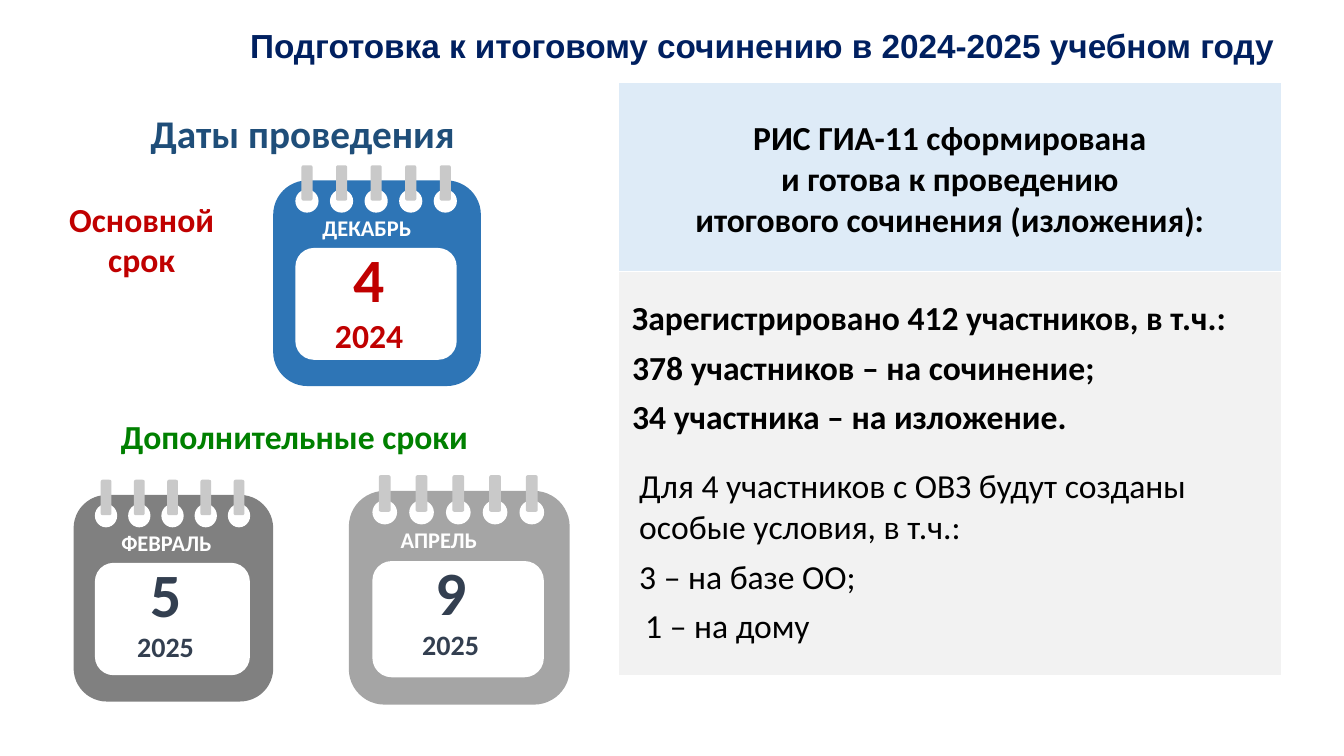
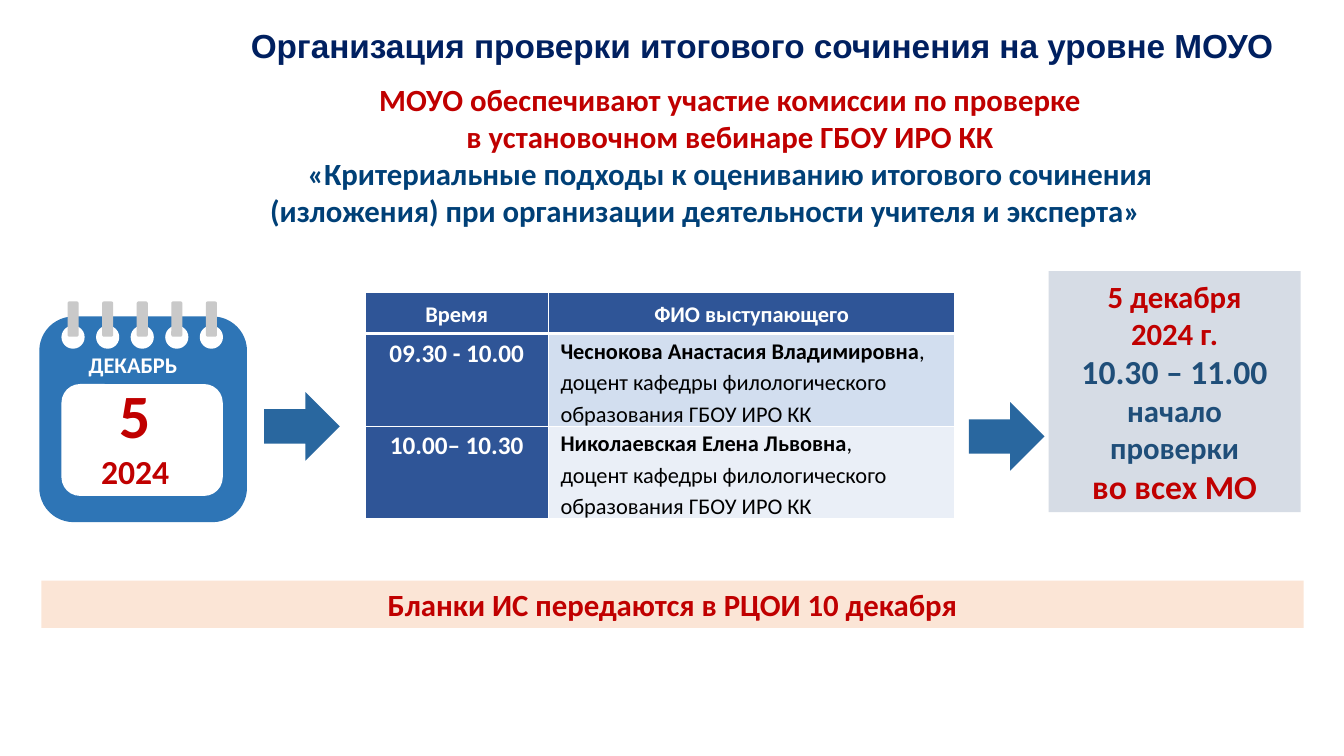
from lxml import etree
from pptx import Presentation
from pptx.dml.color import RGBColor
from pptx.enum import shapes as sh, text as tx
from pptx.oxml import ns
from pptx.util import Inches, Pt

NAVY = RGBColor(0x00, 0x20, 0x60)
RED = RGBColor(0xC0, 0x00, 0x00)
GREEN = RGBColor(0x00, 0x80, 0x00)
BLUE = RGBColor(0x2E, 0x75, 0xB6)
DEEP = RGBColor(0x1F, 0x4E, 0x79)
SEA = RGBColor(0x00, 0x40, 0x77)
HEAD = RGBColor(0x2F, 0x55, 0x97)
ARROW = RGBColor(0x29, 0x67, 0x9F)
SLATE = RGBColor(0x33, 0x3F, 0x50)
DARK = RGBColor(0x80, 0x80, 0x80)
GREY = RGBColor(0xA5, 0xA5, 0xA5)
PIN = RGBColor(0xC9, 0xC9, 0xC9)
MIST = RGBColor(0xD6, 0xDC, 0xE5)
PEACH = RGBColor(0xFB, 0xE5, 0xD6)
SKY = RGBColor(0xDE, 0xEB, 0xF7)
PALE = RGBColor(0xF2, 0xF2, 0xF2)
BAND = RGBColor(0xD2, 0xDE, 0xEF)
LIGHT = RGBColor(0xEA, 0xEF, 0xF7)
BLACK = RGBColor(0, 0, 0)
WHITE = RGBColor(0xFF, 0xFF, 0xFF)

MID = tx.PP_ALIGN.CENTER
LEFT = tx.PP_ALIGN.LEFT
ROUND = sh.MSO_SHAPE.ROUNDED_RECTANGLE
OVAL = sh.MSO_SHAPE.OVAL
RECT = sh.MSO_SHAPE.RECTANGLE
RIGHT = sh.MSO_SHAPE.RIGHT_ARROW


def put(frame, words, size=24, color=BLACK, bold=True, font="Calibri",
        align=MID, left=0, first=0, before=0, lead=None, plain=False,
        same=False):
    """Add a paragraph, or with same=True a run on the last one."""
    par = frame.paragraphs[-1]
    if not same:
        if par.runs:
            par = frame.add_paragraph()
        par.alignment = align
        par.space_before = Pt(before)
        if lead:
            par.line_spacing = lead
        prop = par._p.get_or_add_pPr()
        prop.set("marL", str(Inches(left)))
        prop.set("indent", str(Inches(first)))
        if plain:
            etree.SubElement(prop, ns.qn("a:buNone"))
    for i, line in enumerate(words.split("\n")):
        if i:
            par.add_line_break()
        if not line:
            continue
        run = par.add_run()
        run.text = line
        run.font.size = Pt(size)
        run.font.name = font
        run.font.bold = bold
        run.font.color.rgb = color


class Deck:
    def __init__(self):
        self.file = Presentation()
        self.file.slide_width = Inches(13.33)
        self.file.slide_height = Inches(7.5)
        self.page = None

    def holder(self, shape, x, y, w, h):
        """Move a placeholder and return its cleared frame."""
        shape.left, shape.top = Inches(x), Inches(y)
        shape.width, shape.height = Inches(w), Inches(h)
        frame = shape.text_frame
        frame.auto_size = tx.MSO_AUTO_SIZE.NONE
        frame.vertical_anchor = tx.MSO_ANCHOR.TOP
        frame.word_wrap = True
        return frame

    def start(self, title, layout):
        self.page = self.file.slides.add_slide(self.file.slide_layouts[layout])
        frame = self.holder(self.page.shapes.title, 2.11, 0.28, 10.89, 0.65)
        put(frame, title, size=23.8, color=NAVY, font="Arial", lead=0.8)

    def body(self, x, y, w, h):
        return self.holder(self.page.placeholders[1], x, y, w, h)

    def label(self, x, y, w, h, home=None):
        home = home or self.page.shapes
        box = home.add_textbox(Inches(x), Inches(y), Inches(w), Inches(h))
        box.text_frame.word_wrap = True
        return box.text_frame

    def block(self, kind, x, y, w, h, fill, home=None):
        home = home or self.page.shapes
        item = home.add_shape(kind, Inches(x), Inches(y), Inches(w), Inches(h))
        item.shadow.inherit = False
        item.fill.solid()
        item.fill.fore_color.rgb = fill
        item.line.fill.background()
        item.text_frame.word_wrap = True
        item.text_frame.vertical_anchor = tx.MSO_ANCHOR.MIDDLE
        return item.text_frame

    def leaf(self, x, y, w, h, fill, month, day, year, ink, small):
        """Draw a calendar leaf; parts scale with its body."""
        home = self.page.shapes.add_group_shape().shapes
        sx, sy = w / 2.06, h / 2.04

        def fit(dx, dy, dw, dh):
            return x + dx * sx, y + dy * sy, dw * sx, dh * sy

        self.block(ROUND, x, y, w, h, fill, home)
        for i in range(5):
            self.block(OVAL, *fit(0.22 + i * 0.343, 0.09, 0.23, 0.23), WHITE, home)
        put(self.label(*fit(0.39, 0.29, 1.52, 0.37), home), month,
            size=16, color=WHITE, align=LEFT)
        self.block(ROUND, *fit(0.22, 0.67, 1.6, 1.11), WHITE, home)
        date = self.label(*fit(-0.09, 0.55, 2.08, 1.25), home)
        put(date, day, size=44, color=ink)
        put(date, year, size=small, color=ink)
        for i in range(5):
            self.block(ROUND, *fit(0.28 + i * 0.343, -0.15, 0.11, 0.35), PIN, home)

    def grid(self, x, y, cols, rows):
        frame = self.page.shapes.add_table(
            len(rows), len(cols), Inches(x), Inches(y),
            Inches(sum(cols)), Inches(sum(rows)))
        table = frame.table
        table.horz_banding = False
        for col, w in zip(table.columns, cols):
            col.width = Inches(w)
        for row, h in zip(table.rows, rows):
            row.height = Inches(h)
        return table

    def cell(self, cell, fill, side=0.01, top=0, mid=True, foot=1):
        """Style a cell with white borders and return its frame."""
        cell.margin_left = cell.margin_right = Inches(side)
        cell.margin_top, cell.margin_bottom = Inches(top), 0
        cell.vertical_anchor = tx.MSO_ANCHOR.MIDDLE if mid else tx.MSO_ANCHOR.TOP
        prop = cell._tc.get_or_add_tcPr()
        for edge, wide in zip("LRTB", (1, 1, 1, foot)):
            line = etree.SubElement(prop, ns.qn("a:ln" + edge), w=str(Pt(wide)))
            paint = etree.SubElement(line, ns.qn("a:solidFill"))
            etree.SubElement(paint, ns.qn("a:srgbClr"), val=str(WHITE))
        cell.fill.solid()
        cell.fill.fore_color.rgb = fill
        return cell.text_frame


def dates(deck):
    deck.start("Подготовка к итоговому сочинению в 2024-2025 учебном году", 5)

    # Registration figures
    table = deck.grid(6.13, 0.82, [6.58], [1.87, 4.01])
    head = deck.cell(table.cell(0, 0), SKY, top=0.36, mid=False)
    for line in ("РИС ГИА-11 сформирована", "и готова к проведению",
                 "итогового сочинения (изложения):"):
        put(head, line)
    facts = deck.cell(table.cell(1, 0), PALE)
    for line, bold, left, gap in (
            ("Зарегистрировано 412 участников, в т.ч.:", True, 0.13, 0),
            ("378 участников – на сочинение;", True, 0.13, 6),
            ("34 участника – на изложение.", True, 0.13, 6),
            ("Для 4 участников с ОВЗ будут созданы особые условия, в т.ч.:",
             False, 0.2, 20),
            ("3 – на базе ОО;", False, 0.2, 6),
            ("1 – на дому", False, 0.26, 6)):
        put(facts, line, bold=bold, align=LEFT, left=left, before=gap)

    # Calendar of dates
    put(deck.label(1.06, 1.04, 3.88, 0.57), "Даты проведения", size=28, color=DEEP)
    put(deck.label(0.49, 1.92, 1.83, 0.91), "Основной срок", color=RED)
    put(deck.label(0.26, 4.08, 5.32, 0.5), "Дополнительные сроки", color=GREEN)
    deck.leaf(2.71, 1.79, 2.06, 2.04, BLUE, "ДЕКАБРЬ", "4", "2024", RED, 24)
    deck.leaf(0.73, 4.91, 1.98, 2.05, DARK, "ФЕВРАЛЬ", "5", "2025", SLATE, 20)
    deck.leaf(3.46, 4.87, 2.19, 2.12, GREY, "АПРЕЛЬ", "9", "2025", SLATE, 20)


def check(deck):
    deck.start("Организация проверки итогового сочинения на уровне МОУО", 1)

    # Webinar notice
    note = deck.body(1.55, 0.75, 10.89, 1.99)
    for line, color in (
            ("МОУО обеспечивают участие комиссии по проверке", RED),
            ("в установочном вебинаре ГБОУ ИРО КК", RED),
            ("«Критериальные подходы к оцениванию итогового сочинения\n"
             "(изложения) при организации деятельности учителя и эксперта»", SEA)):
        put(note, line, size=22, color=color, first=0.49, plain=True)

    # Date and speakers
    deck.leaf(0.39, 3.14, 2.06, 2.04, BLUE, "ДЕКАБРЬ", "5", "2024", RED, 24)
    table = deck.grid(3.62, 2.9, [1.82, 4.03], [0.41, 0.92, 0.92])
    for i, name in enumerate(("Время", "ФИО выступающего")):
        put(deck.cell(table.cell(0, i), HEAD, side=0.07, foot=3), name,
            size=16, color=WHITE, lead=1.15)
    for i, (time, name, fill) in enumerate((
            ("09.30 - 10.00", "Чеснокова Анастасия Владимировна", BAND),
            ("10.00– 10.30", "Николаевская Елена Львовна", LIGHT)), 1):
        put(deck.cell(table.cell(i, 0), HEAD, side=0.07, mid=False), time,
            size=18, color=WHITE, lead=1.15)
        who = deck.cell(table.cell(i, 1), fill, side=0.12)
        put(who, name, size=16, align=LEFT, lead=1.15)
        put(who, ",\nдоцент кафедры филологического образования ГБОУ ИРО КК",
            size=16, bold=False, same=True)

    # Arrows and the start of checking
    for x, y in ((2.62, 3.89), (9.61, 3.99)):
        deck.block(RIGHT, x, y, 0.75, 0.68, ARROW)
    begin = deck.block(RECT, 10.4, 2.69, 2.5, 2.39, MIST)
    put(begin, "5 декабря", size=22, color=RED)
    put(begin, "2024 г.", size=22, color=RED)
    put(begin, "10.30 – 11.00", color=DEEP)
    put(begin, "\nначало\nпроверки", size=22, color=DEEP, same=True)
    put(begin, "во всех МО", color=RED)

    # Closing band
    put(deck.block(RECT, 0.41, 5.76, 12.52, 0.47, PEACH),
        "Бланки ИС передаются в РЦОИ 10 декабря", size=22, color=RED)


def main():
    deck = Deck()
    dates(deck)
    check(deck)
    deck.file.save("out.pptx")


if __name__ == "__main__":
    main()
